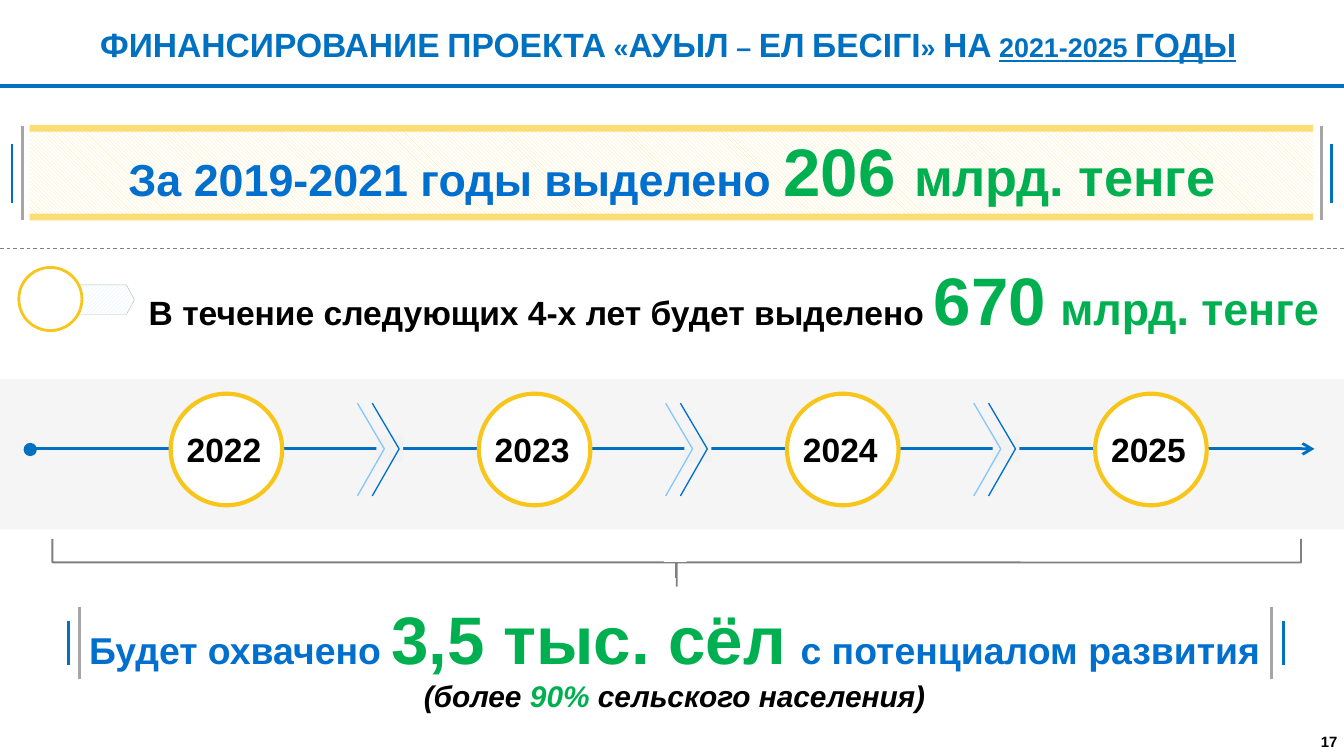
from pptx import Presentation
from pptx.dml.color import RGBColor
from pptx.enum.dml import MSO_LINE as Dash, MSO_PATTERN as Pattern
from pptx.enum.shapes import MSO_CONNECTOR as Link, MSO_SHAPE as Kind
from pptx.enum.text import MSO_ANCHOR as Anchor, MSO_AUTO_SIZE as Fit, PP_ALIGN as Align
from pptx.oxml.ns import qn
from pptx.oxml.xmlchemy import OxmlElement
from pptx.util import Inches, Pt

BLUE, TEXT_BLUE, SKY = "0070C0", "006FCE", "85C7FF"
GREEN, GOLD, SAND = "00B050", "F8C51B", "FBDD76"
BLACK, WHITE, PALE, GREY, SILVER = "000000", "FFFFFF", "F2F2F2", "808080", "A6A6A6"


def color(value):
    return RGBColor.from_string(value)


def cells(*counts):
    """The grid has 100 columns and 56.2 rows of square cells, ten to the inch."""
    return [Inches(count / 10) for count in counts]


class Slide:
    font = "Arial"

    def __init__(self, deck):
        self.page = deck.slides.add_slide(deck.slide_layouts[5])
        self.shapes = self.page.shapes

    def set_text(self, box, paras, anchor=Anchor.TOP, align=Align.CENTER, wrap=True):
        """Each paragraph is a list of spans: (text, size, colour)."""
        frame = box.text_frame
        frame.auto_size, frame.word_wrap = Fit.NONE, wrap
        frame.vertical_anchor = anchor
        for number, spans in enumerate(paras):
            para = frame.add_paragraph() if number else frame.paragraphs[0]
            para.alignment = align
            para.font.name, para.font.bold = self.font, True
            for text, size, tint in spans:
                span = para.add_run()
                span.text = text
                span.font.size = Pt(size)
                span.font.color.rgb = color(tint)
        return frame.paragraphs

    def title(self, place, spans):
        box = self.shapes.title
        box.left, box.top, box.width, box.height = cells(*place)
        return self.set_text(box, [spans], Anchor.MIDDLE)[0]

    def text(self, place, paras, **options):
        return self.set_text(self.shapes.add_textbox(*cells(*place)), paras, **options)

    def outline(self, item, tint, width):
        if tint:
            item.line.color.rgb = color(tint)
            item.line.width = Pt(width)
        else:
            item.line.fill.background()

    def shape(self, kind, place, fill=None, line=None, width=1, pattern=None, adjust=()):
        item = self.shapes.add_shape(kind, *cells(*place))
        item.shadow.inherit = False
        if pattern:
            item.fill.patterned()
            item.fill.pattern = pattern
            item.fill.fore_color.rgb = color(fill)
            item.fill.back_color.rgb = color(WHITE)
        elif fill:
            item.fill.solid()
            item.fill.fore_color.rgb = color(fill)
        else:
            item.fill.background()
        self.outline(item, line, width)
        for number, value in enumerate(adjust):
            item.adjustments[number] = value
        return item

    def line(self, start, end, tint, width, dash=None, arrow=False):
        item = self.shapes.add_connector(Link.STRAIGHT, *cells(*start, *end))
        self.outline(item, tint, width)
        if dash:
            item.line.dash_style = dash
        properties = item._element.spPr
        if arrow:
            head = OxmlElement("a:tailEnd")
            head.set("type", "arrow")
            properties.find(qn("a:ln")).append(head)
        properties.append(OxmlElement("a:effectLst"))

    def chevron(self, left, tint):
        builder = self.shapes.build_freeform(*cells(left, 30), scale=1.0)
        builder.add_line_segments([cells(left + 2, 33.4), cells(left, 36.9)], close=False)
        item = builder.convert_to_shape()
        item.shadow.inherit = False
        item.fill.background()
        self.outline(item, tint, 0.72)

    def side_bars(self, grey, blue, grey_span, blue_span):
        for column, (top, bottom), tint in ((grey, grey_span, SILVER), (blue, blue_span, BLUE)):
            self.line((column, bottom), (column, top), tint, 1.5)


def main():
    deck = Presentation()
    deck.slide_width, deck.slide_height = cells(100, 56.25)
    slide = Slide(deck)

    # Timeline band and axis
    band = slide.shape(Kind.RECTANGLE, (0, 28.2, 100, 11.2), PALE)
    alpha = OxmlElement("a:alpha")
    alpha.set("val", "70000")
    band._element.spPr.find(qn("a:solidFill"))[0].append(alpha)
    slide.line((2.2, 33.4), (97.8, 33.4), BLUE, 1.5, arrow=True)

    # Title in small capitals, with the years underlined
    heading = slide.title((0, 0, 100, 6.6), [
        ("ФИНАНСИРОВАНИЕ ПРОЕКТА «АУЫЛ – ЕЛ БЕСІГІ» НА ", 18, BLUE),
        ("2021-2025 ГОДЫ", 18, BLUE), (" ", 18, BLUE)])
    for span in heading.runs:
        span.font._element.set("cap", "small")
    heading.runs[1].font.underline = True
    slide.line((0, 6.4), (100, 6.4), BLUE, 2.25)

    # Banner: money already allotted
    slide.shape(Kind.ROUNDED_RECTANGLE, (2.2, 9.5, 95.5, 6.7), "FDE8A4",
                pattern=Pattern.LIGHT_DOWNWARD_DIAGONAL, adjust=[0])
    for top in (15.9, 9.3):
        slide.shape(Kind.RECTANGLE, (2.2, top, 95.5, 0.5), SAND)
    for grey, blue in ((98.3, 99.1), (1.7, 0.9)):
        slide.side_bars(grey, blue, (9.4, 16.4), (10.7, 15.1))
    slide.text((6.8, 9.1, 86.4, 7.1), [[
        ("За 2019-2021 годы выделено ", 24, TEXT_BLUE),
        ("206 ", 36, GREEN), ("млрд. тенге", 28, GREEN)]])

    # Villages covered
    coverage = slide.text((4.3, 43.7, 91.8, 9.9), [
        [("Будет охвачено ", 20, TEXT_BLUE), ("3,5 тыс. сёл", 36, GREEN),
         (" ", 28, GREEN), ("с потенциалом развития", 20, TEXT_BLUE)],
        [("(более ", 16, BLACK), ("90% ", 16, GREEN),
         ("сельского населения)", 16, BLACK)]], anchor=Anchor.BOTTOM)
    coverage[1].font.italic = True
    for grey, blue in ((94.6, 95.5), (5.9, 5.1)):
        slide.side_bars(grey, blue, (45.2, 50.5), (46.2, 49.5))

    # Years, with a double chevron between neighbours
    step = 22.93
    for number in range(4):
        left = 12.7 + number * step
        slide.shape(Kind.OVAL, (left, 29.3, 8.3, 8.3), WHITE, GOLD, 2.25)
        slide.text((left + 0.2, 31.4, 7.6, 4), [[(str(2022 + number), 18, BLACK)]],
                   align=Align.LEFT, wrap=False)
        if number < 3:
            slide.shape(Kind.RECTANGLE, (left + 15.3, 32.4, 2, 2), PALE)
            slide.chevron(left + 13.9, SKY)
            slide.chevron(left + 15, TEXT_BLUE)
    slide.shape(Kind.OVAL, (1.9, 33.1, 0.7, 0.7), BLUE, BLUE, 2)

    # Money for the next four years
    slide.line((0, 18.5), (100, 18.5), "7F7F7F", 0.5, dash=Dash.DASH)
    slide.text((10, 18.7, 89.2, 7.1), [[
        ("В течение следующих 4-х лет будет выделено ", 18, BLACK),
        ("670", 36, GREEN), (" ", 28, GREEN), ("млрд. тенге", 24, GREEN)]])
    slide.shape(Kind.PENTAGON, (5.8, 21.2, 4.2, 2.2), "D5F2FC", "BFBFBF", 0.25,
                pattern=Pattern.DARK_UPWARD_DIAGONAL, adjust=[0.27])
    slide.shape(Kind.OVAL, (1.4, 19.9, 4.7, 4.7), WHITE, GOLD, 1.5)

    # Bracket from the years to the result
    slide.line((50.3, 41.7), (50.3, 43), GREY, 1)
    brace = slide.shape(Kind.RIGHT_BRACE, (48.6, -4.6, 3.5, 92.9), line=GREY, adjust=[0, 0.5])
    brace.rotation = 90
    slide.shape(Kind.RECTANGLE, (49.4, 39.9, 1.7, 1.9), WHITE)

    # Page number
    slide.text((97.1, 54.3, 3.6, 1.8), [[("17", 8, BLACK)]], anchor=Anchor.MIDDLE)

    deck.save("out.pptx")


if __name__ == "__main__":
    main()
